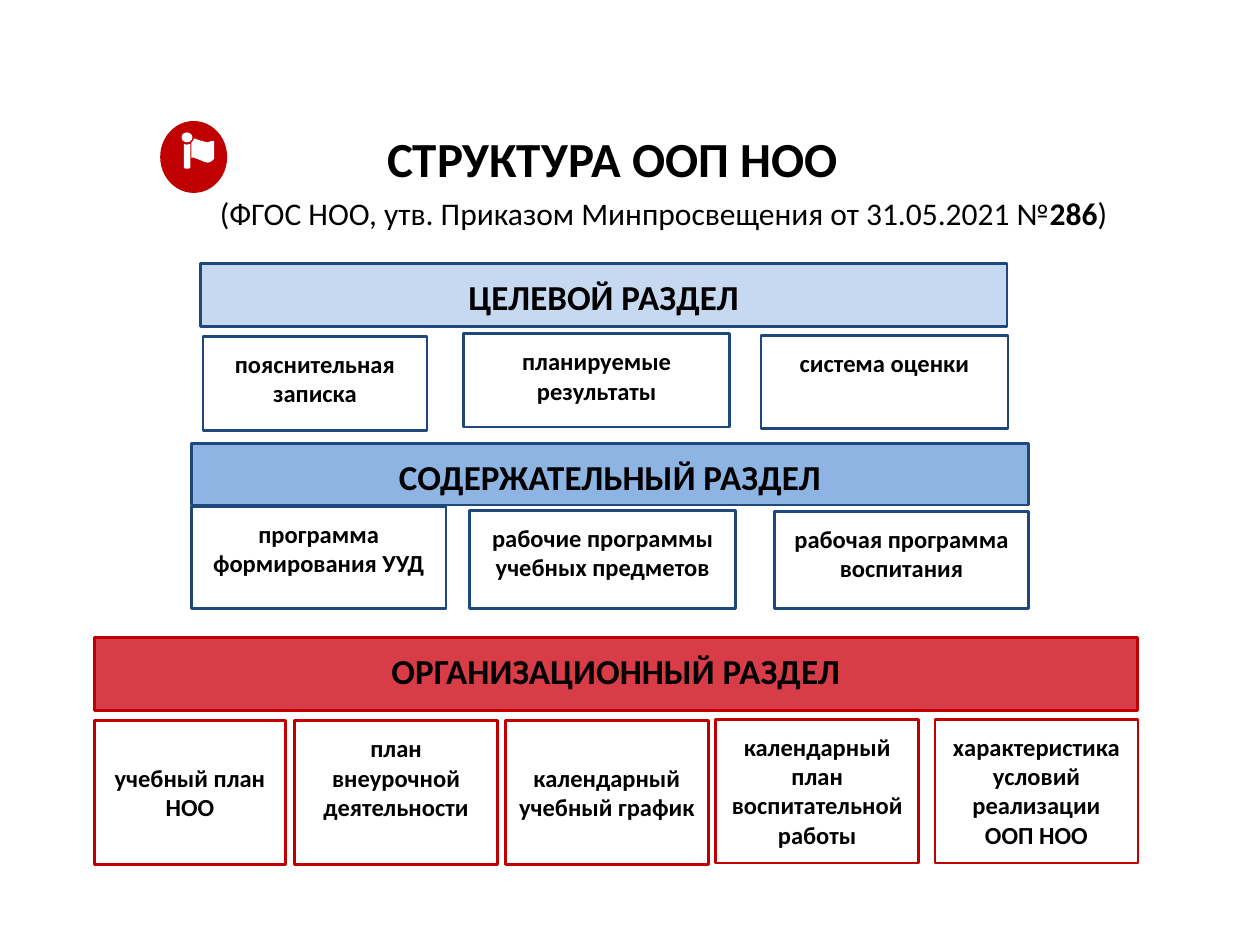
from pptx import Presentation
from pptx.dml.color import RGBColor
from pptx.enum.shapes import MSO_SHAPE
from pptx.enum.text import MSO_ANCHOR, PP_ALIGN
from pptx.util import Cm, Pt

RECT, OVAL = MSO_SHAPE.RECTANGLE, MSO_SHAPE.OVAL
TOP, CENTER = MSO_ANCHOR.TOP, PP_ALIGN.CENTER
FONT = "Calibri"
BLUE, RED, WHITE, BLACK = "1F497D", "C00000", "FFFFFF", "000000"
INSET = 0.25
LOW_INSET = 0.85  # starts the text one line lower

# Each section: header text, header box, fill, line colour,
# then its parts: text, box and optional top inset (cm)
SECTIONS = [
    ("ЦЕЛЕВОЙ РАЗДЕЛ", (4.04, 5.31, 16.26, 1.27), "C6D9F1", BLUE, [
        ("пояснительная записка", (4.09, 6.78, 4.52, 1.9)),
        ("планируемые результаты", (9.35, 6.73, 5.36, 1.88)),
        ("система оценки", (15.34, 6.76, 4.98, 1.88)),
    ]),
    ("СОДЕРЖАТЕЛЬНЫЙ РАЗДЕЛ", (3.86, 8.94, 16.87, 1.24), "8EB4E3", BLUE, [
        ("программа формирования УУД", (3.86, 10.21, 5.13, 2.06)),
        ("рабочие программы учебных предметов", (9.47, 10.29, 5.36, 1.98)),
        ("рабочая программа воспитания", (15.62, 10.31, 5.11, 1.96)),
    ]),
    ("ОРГАНИЗАЦИОННЫЙ РАЗДЕЛ", (1.9, 12.85, 21.03, 1.47), "D83C47", RED, [
        ("учебный план НОО", (1.9, 14.53, 3.86, 2.9), LOW_INSET),
        ("план внеурочной деятельности", (5.94, 14.53, 4.09, 2.9)),
        ("календарный учебный график", (10.19, 14.53, 4.09, 2.9), LOW_INSET),
        ("календарный план воспитательной работы", (14.43, 14.5, 4.09, 2.9)),
        ("характеристика условий реализации ООП НОО", (18.85, 14.5, 4.09, 2.9)),
    ]),
]

# Icon outlines (cm)
POLE = [(3.71, 2.9), (3.71, 3.38), (3.73, 3.4), (3.81, 3.4), (3.84, 3.38),
        (3.84, 2.9), (3.76, 2.92)]
FLAG = [(3.91, 2.79), (3.89, 2.84), (3.86, 2.87), (3.86, 3.18), (3.91, 3.18),
        (4.04, 3.23), (4.11, 3.26), (4.19, 3.28), (4.25, 3.26), (4.29, 3.23),
        (4.32, 3.2), (4.32, 2.84), (4.27, 2.84), (4.19, 2.87), (4.06, 2.84)]


def rgb(color):
    return RGBColor.from_string(color)


def style(sp, fill=None, line=None):
    sp.shadow.inherit = False
    if fill:
        sp.fill.solid()
        sp.fill.fore_color.rgb = rgb(fill)
    else:
        sp.fill.background()
    if line:
        sp.line.color.rgb = rgb(line)
        sp.line.width = Pt(1.5)
    else:
        sp.line.fill.background()


def write(sp, runs, size, top=INSET):
    """Fill a shape with one centred paragraph of (text, bold) runs."""
    tf = sp.text_frame
    tf.word_wrap = True
    tf.vertical_anchor = TOP
    tf.margin_left = tf.margin_right = tf.margin_bottom = Cm(INSET)
    tf.margin_top = Cm(top)
    p = tf.paragraphs[0]
    p.alignment = CENTER
    for text, bold in runs:
        r = p.add_run()
        r.text = text
        r.font.name = FONT
        r.font.size = Pt(size)
        r.font.bold = bold
        r.font.color.rgb = rgb(BLACK)


def add_box(s, text, box, size, line, fill=None, top=INSET):
    sp = s.shapes.add_shape(RECT, *map(Cm, box))
    style(sp, fill, line)
    write(sp, [(text, True)], size, top)


def add_label(s, runs, box, size):
    write(s.shapes.add_textbox(*map(Cm, box)), runs, size)


def add_disc(s, box, fill):
    style(s.shapes.add_shape(OVAL, *map(Cm, box)), fill)


def add_outline(s, points, fill):
    start, *rest = [(Cm(x), Cm(y)) for x, y in points]
    fb = s.shapes.build_freeform(*start)
    fb.add_line_segments(rest, close=True)
    style(fb.convert_to_shape(), fill)


def add_section(s, title, box, fill, line, parts):
    for text, part_box, *top in parts:
        add_box(s, text, part_box, 14, line, None, *top)
    add_box(s, title, box, 20, line, fill)


def add_icon(s):
    add_disc(s, (3.23, 2.44, 1.35, 1.45), RED)
    add_disc(s, (3.66, 2.67, 0.22, 0.2), WHITE)
    for outline in (POLE, FLAG):
        add_outline(s, outline, WHITE)


def main():
    prs = Presentation()
    prs.slide_width, prs.slide_height = Cm(25.4), Cm(19.05)
    s = prs.slides.add_slide(prs.slide_layouts[6])

    # Heading
    add_label(s, [("(ФГОС НОО, утв. Приказом Минпросвещения от 31.05.2021 №", False),
                  ("286", True), (")", False)], (3.81, 3.66, 19.13, 1.32), 18)
    add_label(s, [("СТРУКТУРА ООП НОО", True)], (3.33, 2.34, 18.03, 1.9), 28)

    # Sections with their parts
    for section in SECTIONS:
        add_section(s, *section)

    # Flag bearer icon
    add_icon(s)
    prs.save("out.pptx")


if __name__ == "__main__":
    main()
